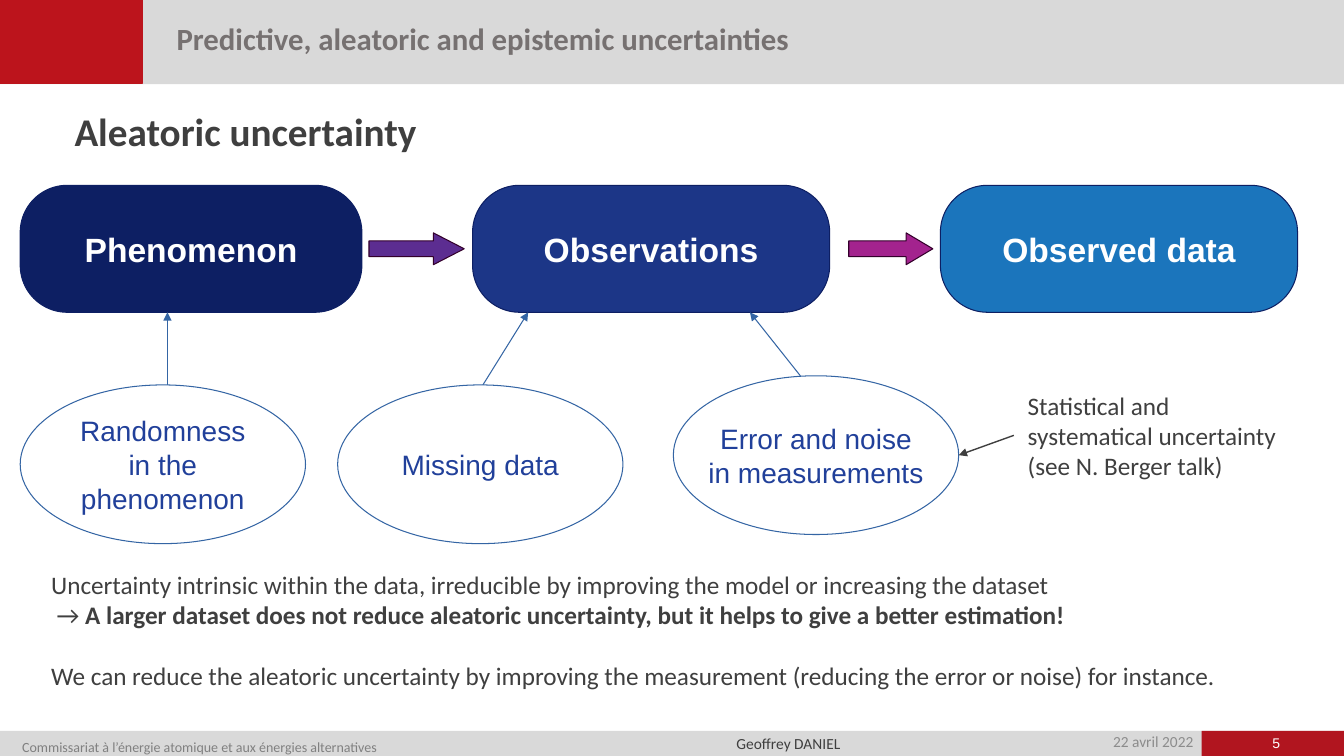
from typing import NamedTuple

from lxml.etree import SubElement
from pptx import Presentation
from pptx.dml.color import RGBColor
from pptx.enum.shapes import MSO_CONNECTOR, MSO_SHAPE
from pptx.enum.text import MSO_ANCHOR, PP_ALIGN
from pptx.oxml.ns import qn
from pptx.util import Cm, Pt

WHITE = RGBColor(0xFF, 0xFF, 0xFF)
BAR_GREY = RGBColor(0xD9, 0xD9, 0xD9)
TITLE_GREY = RGBColor(0x76, 0x71, 0x71)
TEXT_GREY = RGBColor(0x3F, 0x3F, 0x3F)
DATE_GREY = RGBColor(0x8C, 0x8C, 0x8C)
INSTITUTE_GREY = RGBColor(0x80, 0x80, 0x80)
HEADER_RED = RGBColor(0xBC, 0x14, 0x1C)
FOOTER_RED = RGBColor(0xB1, 0x15, 0x1F)
NAVY = RGBColor(0x0D, 0x1F, 0x63)
ROYAL_BLUE = RGBColor(0x1C, 0x36, 0x87)
SKY_BLUE = RGBColor(0x1B, 0x75, 0xBC)
PURPLE = RGBColor(0x5C, 0x2D, 0x91)
MAGENTA = RGBColor(0xA3, 0x23, 0x8E)
ARROW_EDGE = RGBColor(0x33, 0x00, 0x2B)
CAUSE_EDGE = RGBColor(0x34, 0x65, 0xA4)
CAUSE_TEXT = RGBColor(0x21, 0x40, 0x9A)


class Box(NamedTuple):
    left: float
    top: float
    width: float
    height: float

    def inner(self, dx, dy, width, height):
        return Box(self.left + dx, self.top + dy, width, height)

    def lengths(self):
        return [Cm(value) for value in self]


def style(paragraph, size, color, font="Calibri", bold=False, align=PP_ALIGN.LEFT):
    paragraph.alignment = align
    paragraph.font.size = Pt(size)
    paragraph.font.name = font
    paragraph.font.bold = bold
    paragraph.font.color.rgb = color


def set_margins(frame, side, vertical):
    frame.margin_left = frame.margin_right = Cm(side)
    frame.margin_top = frame.margin_bottom = Cm(vertical)


def add_filled(slide, kind, box, fill, edge=None, weight=0.75):
    shape = slide.shapes.add_shape(kind, *box.lengths())
    shape.shadow.inherit = False
    shape.fill.solid()
    shape.fill.fore_color.rgb = fill
    if edge is None:
        shape.line.fill.background()
    else:
        shape.line.color.rgb = edge
        shape.line.width = Pt(weight)
    return shape


def add_label(shape, text, size, color, bold=False):
    frame = shape.text_frame
    frame.word_wrap = False
    frame.vertical_anchor = MSO_ANCHOR.MIDDLE
    frame.paragraphs[0].text = text
    style(frame.paragraphs[0], size, color, "Arial", bold, PP_ALIGN.CENTER)


def add_text(slide, box, text, size, color, **options):
    frame = slide.shapes.add_textbox(*box.lengths()).text_frame
    frame.word_wrap = True
    frame.paragraphs[0].text = text
    style(frame.paragraphs[0], size, color, **options)
    return frame


def add_arrow(slide, start, end, color, weight=0.75):
    points = [Cm(value) for value in (*start, *end)]
    arrow = slide.shapes.add_connector(MSO_CONNECTOR.STRAIGHT, *points)
    arrow.line.color.rgb = color
    arrow.line.width = Pt(weight)
    properties = arrow._element.spPr
    SubElement(properties.find(qn("a:ln")), qn("a:tailEnd"), type="triangle")
    SubElement(properties, qn("a:effectLst"))


def add_header(slide, box):
    add_filled(slide, MSO_SHAPE.RECTANGLE, box, BAR_GREY)
    add_filled(slide, MSO_SHAPE.RECTANGLE, box.inner(0, 0, 3.58, 2.18),
               HEADER_RED, HEADER_RED, 1)
    title = slide.shapes.title
    slide.shapes._spTree.append(title._element)
    title.left, title.top, title.width, title.height = box.inner(
        4.09, 0.61, 18.49, 1.04).lengths()
    frame = title.text_frame
    frame.text = "Predictive, aleatoric and epistemic uncertainties"
    frame.vertical_anchor = MSO_ANCHOR.MIDDLE
    set_margins(frame, 0.36, 0.13)
    style(frame.paragraphs[0], 22, TITLE_GREY, bold=True)
    frame.paragraphs[0].line_spacing = 0.8


def add_footer(slide, box):
    add_filled(slide, MSO_SHAPE.RECTANGLE, box, BAR_GREY)
    add_filled(slide, MSO_SHAPE.RECTANGLE, box.inner(30.28, 0, 3.6, box.height), FOOTER_RED)
    entries = [
        (24.41, 0.09, 5.87, "22 avril 2022", 11, DATE_GREY, "Calibri", PP_ALIGN.RIGHT, 0.9),
        (0.36, 0.03, 15.32, "Commissariat à l’énergie atomique et aux énergies alternatives",
         10, INSTITUTE_GREY, "Calibri", PP_ALIGN.LEFT, 1.4),
        (18.36, 0.09, 3.07, "Geoffrey DANIEL", 11, TEXT_GREY, "Calibri", PP_ALIGN.LEFT, 1.0),
        (30.99, 0.09, 2.34, "5", 10, WHITE, "Arial", PP_ALIGN.CENTER, 1.0),
    ]
    for dx, dy, width, text, size, color, font, align, spacing in entries:
        frame = add_text(slide, box.inner(dx, dy, width, 0.45), text, size, color,
                         font=font, align=align)
        set_margins(frame, 0.2, 0)
        frame.paragraphs[0].line_spacing = spacing


def add_stages(slide, box):
    stages = [
        (0, 8.61, "Phenomenon", NAVY),
        (11.4, 9, "Observations", ROYAL_BLUE),
        (23.19, 9, "Observed data", SKY_BLUE),
    ]
    for dx, width, name, fill in stages:
        stage = add_filled(slide, MSO_SHAPE.ROUNDED_RECTANGLE,
                           box.inner(dx, 0, width, box.height), fill, NAVY)
        stage.adjustments[0] = 0.37
        add_label(stage, name, 24, WHITE, bold=True)
    for dx, width, fill, head in [(8.79, 2.4, PURPLE, 0.97), (20.88, 2.12, MAGENTA, 0.84)]:
        step = add_filled(slide, MSO_SHAPE.RIGHT_ARROW,
                          box.inner(dx, 1.2, width, 0.8), fill, ARROW_EDGE)
        step.adjustments[0] = 0.5
        step.adjustments[1] = head


def add_causes(slide, box):
    causes = [
        (0, 1.83, "Randomness\nin the\nphenomenon", 3.71, 3.71),
        (8, 1.83, "Missing data", 11.66, 12.8),
        (16.46, 1.6, "Error and noise\nin measurements", 19.66, 18.39),
    ]
    for dx, dy, name, start, end in causes:
        add_arrow(slide, (box.left + start, box.top + dy), (box.left + end, box.top), CAUSE_EDGE)
        cause = add_filled(slide, MSO_SHAPE.OVAL, box.inner(dx, dy, 7.19, 4), WHITE, CAUSE_EDGE)
        add_label(cause, name, 20, CAUSE_TEXT)
    add_arrow(slide, (box.left + 25.04, box.top + 3.1),
              (box.left + 23.65, box.top + 3.6), TEXT_GREY, 1)
    add_text(slide, box.inner(25.14, 1.83, 7.06, 2.57),
             "Statistical and systematical uncertainty (see N. Berger talk)", 18, TEXT_GREY)


def add_conclusions(slide, box):
    frame = add_text(
        slide, box,
        "Uncertainty intrinsic within the data, irreducible by improving the model "
        "or increasing the dataset", 18, TEXT_GREY)
    estimation = frame.add_paragraph()
    estimation._p.get_or_add_pPr().set("marL", str(Cm(0.14)))
    estimation.add_run().text = "→ "
    claim = estimation.add_run()
    claim.text = ("A larger dataset does not reduce aleatoric uncertainty, "
                  "but it helps to give a better estimation!")
    style(estimation, 18, TEXT_GREY)
    claim.font.bold = True
    remedy = frame.add_paragraph()
    remedy.text = ("We can reduce the aleatoric uncertainty by improving the measurement "
                   "(reducing the error or noise) for instance.")
    remedy.space_before = Pt(22)
    style(remedy, 18, TEXT_GREY)


def main():
    deck = Presentation()
    deck.slide_width, deck.slide_height = Cm(33.87), Cm(19.05)
    slide = deck.slides.add_slide(deck.slide_layouts[5])
    add_header(slide, Box(0, -0.08, 33.87, 2.2))
    add_footer(slide, Box(0, 18.42, 33.87, 0.65))
    add_text(slide, Box(1.63, 2.59, 23.11, 2.64), "Aleatoric uncertainty",
             28, TEXT_GREY, bold=True)
    add_stages(slide, Box(0.51, 4.67, 32.18, 3.2))
    add_causes(slide, Box(0.51, 7.87, 32.2, 5.83))
    add_conclusions(slide, Box(1.04, 14.22, 30.91, 3.33))
    deck.save("out.pptx")


if __name__ == "__main__":
    main()
